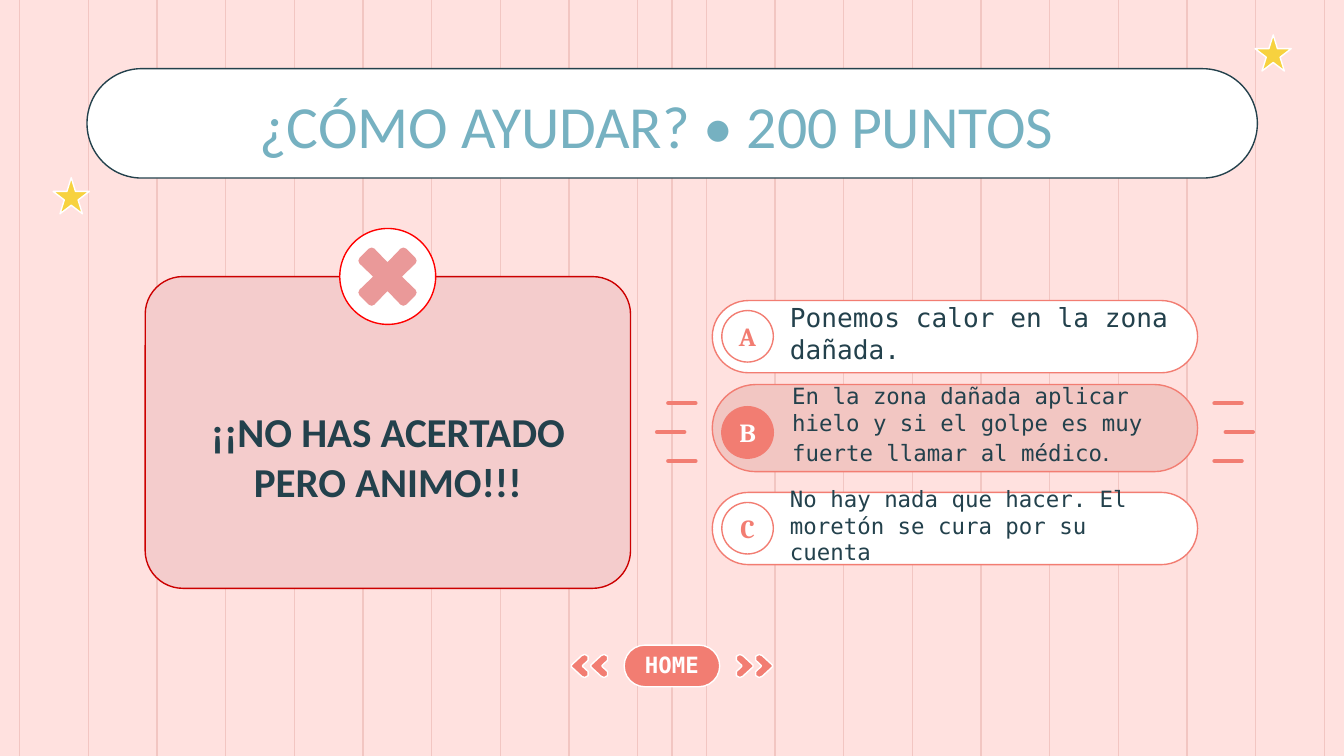
from lxml import etree
from pptx import Presentation
from pptx.dml.color import RGBColor
from pptx.enum import shapes as sh, text as tx
from pptx.oxml import ns
from pptx.util import Pt

HUES = {
    "back": "FFE1DF", "stripe": "F2C6C2", "coral": "F27D72", "white": "FFFFFF",
    "dark": "23414C", "blue": "76B1C1", "gold": "F7D23F", "card": "F4CCCC",
    "edge": "CC0000", "red": "FF0000", "cross": "EA9999",
}
MONO = "DejaVu Sans Mono"
KIND = sh.MSO_SHAPE
LEFT, MID = tx.PP_ALIGN.LEFT, tx.PP_ALIGN.CENTER


def hue(name):
    return RGBColor.from_string(HUES[name])


def paint(item, fill, line=None):
    item.shadow.inherit = False
    item.fill.solid()
    item.fill.fore_color.rgb = hue(fill)
    if line:
        item.line.color.rgb = hue(line)
        item.line.width = Pt(0.75)
    else:
        item.line.fill.background()
    return item


def write(item, words, size=12, font=MONO, color="dark", bold=False, align=MID,
          anchor=tx.MSO_ANCHOR.MIDDLE, pad=(7.2, 7.2, 7.2, 7.2)):
    """Fill one paragraph and return it."""
    frame = item.text_frame
    frame.word_wrap = True
    frame.auto_size = tx.MSO_AUTO_SIZE.NONE
    frame.vertical_anchor = anchor
    (frame.margin_left, frame.margin_top,
     frame.margin_right, frame.margin_bottom) = map(Pt, pad)
    para = frame.paragraphs[0]
    para.alignment = align
    add_run(para, words, size, font, color, bold)
    return para


def add_run(para, words, size, font, color, bold=False):
    run = para.add_run()
    run.text = words
    run.font.size, run.font.name, run.font.bold = Pt(size), font, bold
    run.font.color.rgb = hue(color)


def add_box(slide, kind, box, fill, line, adj=None):
    item = slide.shapes.add_shape(kind, *map(Pt, box))
    if adj is not None:
        item.adjustments[0] = adj
    return paint(item, fill, line)


def add_line(slide, x1, y1, x2, y2, color, width):
    line = slide.shapes.add_connector(
        sh.MSO_CONNECTOR.STRAIGHT, *map(Pt, (x1, y1, x2, y2)))
    line.line.color.rgb = hue(color)
    line.line.width = Pt(width)
    etree.SubElement(line.element.spPr, ns.qn("a:effectLst"))
    return line


def add_poly(slide, dots, fill, line=None):
    first, *rest = [(Pt(x), Pt(y)) for x, y in dots]
    pen = slide.shapes.build_freeform(*first)
    pen.add_line_segments(rest, close=True)
    return paint(pen.convert_to_shape(), fill, line)


def add_back(slide):
    slide.background.fill.solid()
    slide.background.fill.fore_color.rgb = hue("back")
    for x in [360] + [10.6 + 36.78 * i for i in range(20)]:
        add_line(slide, x, 0, x, 405, "stripe", 0.75)
    add_box(slide, KIND.ROUNDED_RECTANGLE, (46.6, 36.8, 627, 58.6),
            "white", "dark", 0.5)
    for x, y in ((28.5, 95.2), (672.4, 18.7)):
        add_box(slide, KIND.STAR_5_POINT, (x, y, 19.4, 19.4), "gold", "white")


def add_title(slide):
    title = slide.shapes.title
    title.left, title.top, title.width, title.height = map(
        Pt, (77.8, 40.3, 548, 46.8))
    write(title, "¿CÓMO AYUDAR? • 200 PUNTOS", size=32, font="Calibri",
          color="blue", anchor=tx.MSO_ANCHOR.TOP)
    # Bring the title in front of its pill
    title.element.getparent().append(title.element)


def add_card(slide):
    card = add_box(slide, KIND.ROUNDED_RECTANGLE, (77.8, 148.2, 260, 167),
                   "card", "edge", 0.121)
    write(card, "¡¡NO HAS ACERTADO PERO ANIMO!!!", size=22, font="Calibri",
          bold=True, pad=(21.6, 32.4, 21.6, 7.2))
    add_box(slide, KIND.OVAL, (182, 122.4, 51.4, 51.4), "white", "red")


def add_cross(slide, mx, my):
    # One arm with blunt corners, turned four times
    arm = [(0, -7.7), (7, -15), (8.5, -15.6), (10, -15),
           (15, -10), (15.6, -8.5), (15, -7)]
    dots = []
    for _ in range(4):
        dots += [(mx + x, my + y) for x, y in arm]
        arm = [(-y, x) for x, y in arm]
    add_poly(slide, dots, "cross")


def add_choice(slide, top, high, mark, words, size, disc, right=False):
    pill = add_box(slide, KIND.ROUNDED_RECTANGLE, (381.6, top, 260, high),
                   "stripe" if right else "white", "coral", 0.5)
    para = write(pill, words, size=size, align=LEFT, pad=(36, 3.6, 7.2, 7.2))
    badge = add_box(slide, KIND.OVAL, (386.7, disc, 27.6, 27.6),
                    "coral" if right else "white", "coral")
    write(badge, mark, size=14, font="Cambria", bold=True,
          color="white" if right else "coral", pad=(0, 7.2, 0, 7.2))
    return para


def add_rays(slide):
    # Three dashes on each side of the right answer
    for side in (-1, 1):
        for y, near in ((216, 139), (231.5, 145), (247, 139)):
            x = 511.6 + side * near
            ray = add_line(slide, x, y, x + side * 14.6, y, "coral", 2.25)
            ray.line.fill.solid()
            ray.line.color.rgb = hue("coral")
            ray.element.spPr.find(ns.qn("a:ln")).set("cap", "rnd")


def add_home(slide):
    home = add_box(slide, KIND.ROUNDED_RECTANGLE, (334.4, 345.6, 51.2, 22.3),
                   "coral", "white", 0.5)
    write(home, "HOME", color="white", bold=True, pad=(7.2, 5.8, 7.2, 7.2))
    # Upper half of a chevron, mirrored downwards and to the left
    half = [(9.8, -0.5), (4.3, -5.6), (2.7, -6.2), (0.9, -5.2),
            (0.9, -3), (3.8, -0.3)]
    full = half + [(x, -y) for x, y in reversed(half)]
    for side in (-1, 1):
        for gap in (33.6, 44):
            add_poly(slide, [(360 + side * (gap + x), 356.8 + y)
                             for x, y in full], "coral", "white")


def main():
    deck = Presentation()
    deck.slide_width, deck.slide_height = Pt(720), Pt(405)
    slide = deck.slides.add_slide(deck.slide_layouts[5])
    add_back(slide)
    add_title(slide)
    add_card(slide)
    # Answers
    add_choice(slide, 161, 38.7, "A", "Ponemos calor en la zona dañada.",
               14, 166.4)
    add_choice(slide, 263.8, 38.7, "C", "No hay nada que hacer. El moretón "
               "se cura por su cuenta", 12, 269.2)
    para = add_choice(slide, 206, 46.7, "B", "En la zona dañada aplicar hielo "
                      "y si el golpe es muy fuerte llamar al médico", 12,
                      217.9, right=True)
    add_run(para, ".", 14, "Arial", "dark")
    add_rays(slide)
    add_cross(slide, 207.6, 148.2)
    add_home(slide)
    deck.save("out.pptx")


if __name__ == "__main__":
    main()
